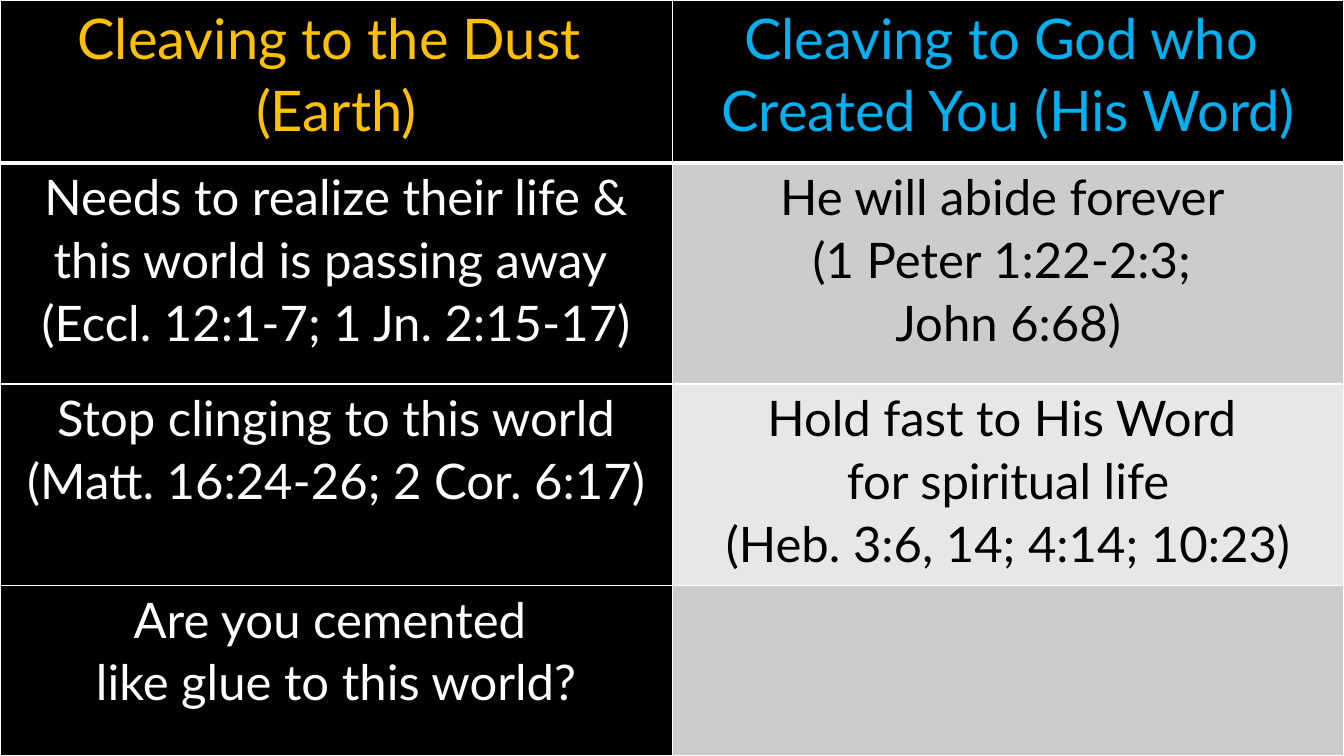
from dataclasses import dataclass

from lxml.etree import SubElement
from pptx import Presentation
from pptx.dml.color import RGBColor
from pptx.enum.text import PP_ALIGN
from pptx.oxml.ns import qn
from pptx.util import Inches, Pt


@dataclass(frozen=True)
class Theme:
    """Colours, font and type sizes of the slide."""
    font: str = "Lato"
    head: int = 40
    body: int = 35
    black: str = "000000"
    white: str = "FFFFFF"
    gold: str = "FFC000"
    blue: str = "00B0F0"
    gray: str = "CCCCCC"
    pale: str = "E7E7E7"


THEME = Theme()
WIDTHS = (6.67, 6.66)
HEIGHTS = (1.62, 2.19, 2, 1.69)
ROWS = (
    (("Cleaving to the Dust ", "(Earth)"),
     ("Cleaving to God who ", "Created You (His Word)")),
    (("Needs to realize their life & this world is passing away ",
      "(Eccl. 12:1-7; 1 Jn. 2:15-17)"),
     ("He will abide forever ", "(1 Peter 1:22-2:3; ", "John 6:68)")),
    (("Stop clinging to this world", "(Matt. 16:24-26; 2 Cor. 6:17)"),
     ("Hold fast to His Word ", "for spiritual life",
      "(Heb. 3:6, 14; 4:14; 10:23)")),
    (("Are you cemented ", "like glue to this world?"), ()),
)


def apply(item, values):
    """Set each named attribute of the item."""
    for name, value in values.items():
        setattr(item, name, value)


def add_edges(cell, row):
    """Draw white cell borders, thicker beneath the header row."""
    props = cell._tc.get_or_add_tcPr()
    widths = {"L": 1, "R": 1, "T": 3 if row == 1 else 1, "B": 3 if row == 0 else 1}
    for side, width in widths.items():
        line = SubElement(props, qn(f"a:ln{side}"), w=str(Pt(width)))
        fill = SubElement(line, qn("a:solidFill"))
        SubElement(fill, qn("a:srgbClr"), val=THEME.white)


def fill_cell(cell, lines, row, size, color, back):
    """Format one cell and write its lines as paragraphs."""
    add_edges(cell, row)
    apply(cell, {"margin_left": Inches(0.07), "margin_right": Inches(0.07),
                 "margin_top": 0, "margin_bottom": 0})
    cell.fill.solid()
    cell.fill.fore_color.rgb = RGBColor.from_string(back)
    frame = cell.text_frame
    for index, line in enumerate(lines):
        para = frame.add_paragraph() if index else frame.paragraphs[0]
        apply(para, {"alignment": PP_ALIGN.CENTER, "line_spacing": 1.07})
        run = para.add_run()
        run.text = line
        apply(run.font, {"name": THEME.font, "size": Pt(size), "bold": False})
        run.font.color.rgb = RGBColor.from_string(color)


def add_grid(slide, left, top, width, height):
    """Place the two-column comparison table in the given box."""
    grid = slide.shapes.add_table(len(ROWS), len(WIDTHS), left, top, width, height).table
    for col, size in zip(grid.columns, WIDTHS):
        col.width = int(width * size / sum(WIDTHS))
    for row, size in zip(grid.rows, HEIGHTS):
        row.height = int(height * size / sum(HEIGHTS))
    for row, pair in enumerate(ROWS):
        band = THEME.gray if row % 2 else THEME.pale
        if row == 0:
            looks = ((THEME.gold, THEME.black), (THEME.blue, THEME.black))
        else:
            looks = ((THEME.white, THEME.black), (THEME.black, band))
        size = THEME.body if row else THEME.head
        for col, (lines, look) in enumerate(zip(pair, looks)):
            fill_cell(grid.cell(row, col), lines, row, size, *look)


def main():
    """Build and save the slide."""
    deck = Presentation()
    apply(deck, {"slide_width": Inches(13.33), "slide_height": Inches(7.5)})
    slide = deck.slides.add_slide(deck.slide_layouts[6])
    slide.background.fill.solid()
    slide.background.fill.fore_color.rgb = RGBColor.from_string(THEME.black)
    add_grid(slide, 0, 0, deck.slide_width, deck.slide_height)
    deck.save("out.pptx")


if __name__ == "__main__":
    main()
